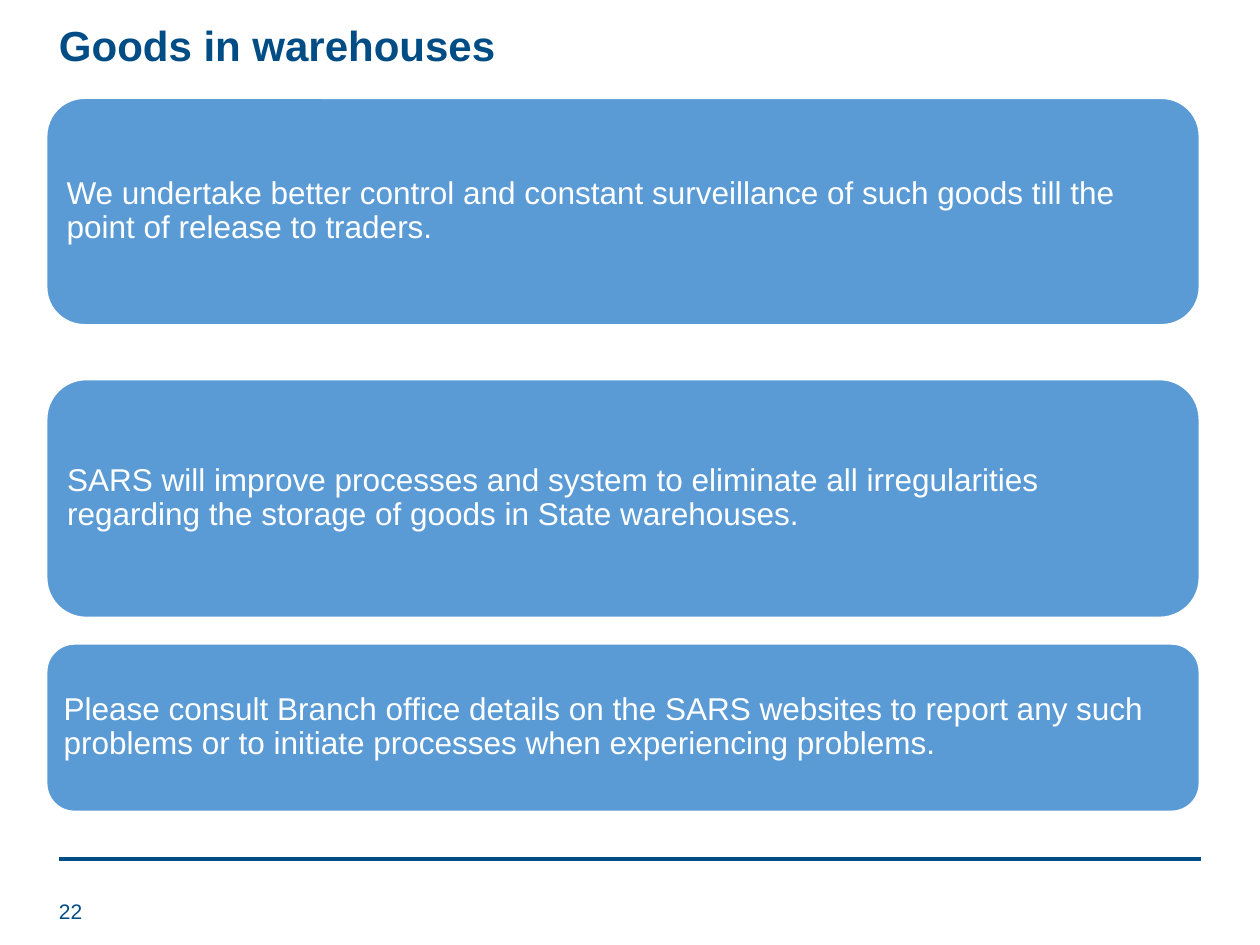
from dataclasses import dataclass

from lxml.etree import SubElement
from pptx import Presentation
from pptx.dml.color import RGBColor
from pptx.enum.shapes import MSO_CONNECTOR, MSO_SHAPE
from pptx.enum.text import MSO_ANCHOR, PP_ALIGN
from pptx.oxml.ns import qn
from pptx.slide import Slide
from pptx.text.text import TextFrame
from pptx.util import Cm, Pt


@dataclass(frozen=True)
class Theme:
    font: str = "Arial"
    navy: RGBColor = RGBColor(0x00, 0x4C, 0x85)
    blue: RGBColor = RGBColor(0x5B, 0x9B, 0xD5)
    white: RGBColor = RGBColor(0xFF, 0xFF, 0xFF)
    title_size: int = 24
    body_size: int = 18
    number_size: int = 12


@dataclass(frozen=True)
class Label:
    text: str
    top: float
    width: float
    height: float
    size: int
    bold: bool
    anchor: MSO_ANCHOR
    line_spacing: float


@dataclass(frozen=True)
class Card:
    text: str
    top: float
    height: float


THEME = Theme()
LEFT = 0.94
CARD_WIDTH = 23.24
CARD_INSET = 0.18
RULE_START, RULE_END, RULE_TOP = 1.19, 24.21, 17.32

LABELS = [
    Label("Goods in warehouses", 0.38, 21.89, 1.6, THEME.title_size, True, MSO_ANCHOR.TOP, 0.9),
    Label("22", 17.86, 5.72, 1.02, THEME.number_size, False, MSO_ANCHOR.MIDDLE, 1.0),
]

CARDS = [
    Card(
        "We undertake better control and constant surveillance of such goods "
        "till the point of release to traders.",
        1.98, 4.57,
    ),
    Card(
        "SARS will improve processes and system to eliminate all irregularities "
        "regarding the storage of goods in State warehouses.",
        7.65, 4.8,
    ),
    Card(
        "Please consult Branch office details on the SARS websites to report any such "
        "problems or to initiate processes when experiencing problems.",
        12.98, 3.38,
    ),
]


def write_text(
    frame: TextFrame, text: str, size: int, color: RGBColor,
    anchor: MSO_ANCHOR, line_spacing: float, bold: bool = False,
) -> None:
    frame.word_wrap = True
    frame.vertical_anchor = anchor
    paragraph = frame.paragraphs[0]
    paragraph.text = text
    paragraph.alignment = PP_ALIGN.LEFT
    paragraph.line_spacing = line_spacing
    paragraph.font.name = THEME.font
    paragraph.font.size = Pt(size)
    paragraph.font.bold = bold
    paragraph.font.color.rgb = color


def add_label(slide: Slide, label: Label) -> None:
    shape = slide.shapes.add_textbox(
        Cm(LEFT), Cm(label.top), Cm(label.width), Cm(label.height)
    )
    write_text(
        shape.text_frame, label.text, label.size, THEME.navy,
        label.anchor, label.line_spacing, label.bold,
    )


def add_card(slide: Slide, card: Card) -> None:
    shape = slide.shapes.add_shape(
        MSO_SHAPE.ROUNDED_RECTANGLE,
        Cm(LEFT), Cm(card.top), Cm(CARD_WIDTH), Cm(card.height),
    )
    shape.shadow.inherit = False
    shape.fill.solid()
    shape.fill.fore_color.rgb = THEME.blue
    shape.line.color.rgb = THEME.white
    shape.line.width = Pt(1)
    frame = shape.text_frame
    frame.margin_left = frame.margin_right = Cm(CARD_INSET)
    frame.margin_top = frame.margin_bottom = Cm(CARD_INSET)
    write_text(frame, card.text, THEME.body_size, THEME.white, MSO_ANCHOR.MIDDLE, 0.9)


def add_footer_rule(slide: Slide) -> None:
    rule = slide.shapes.add_connector(
        MSO_CONNECTOR.STRAIGHT,
        Cm(RULE_START), Cm(RULE_TOP), Cm(RULE_END), Cm(RULE_TOP),
    )
    rule.line.color.rgb = THEME.navy
    rule.line.width = Pt(2)
    SubElement(rule._element.spPr, qn("a:effectLst"))


def main() -> None:
    presentation = Presentation()
    presentation.slide_width = Cm(25.4)
    presentation.slide_height = Cm(19.05)
    slide = presentation.slides.add_slide(presentation.slide_layouts[6])
    add_footer_rule(slide)
    for label in LABELS:
        add_label(slide, label)
    for card in CARDS:
        add_card(slide, card)
    presentation.save("out.pptx")


if __name__ == "__main__":
    main()
